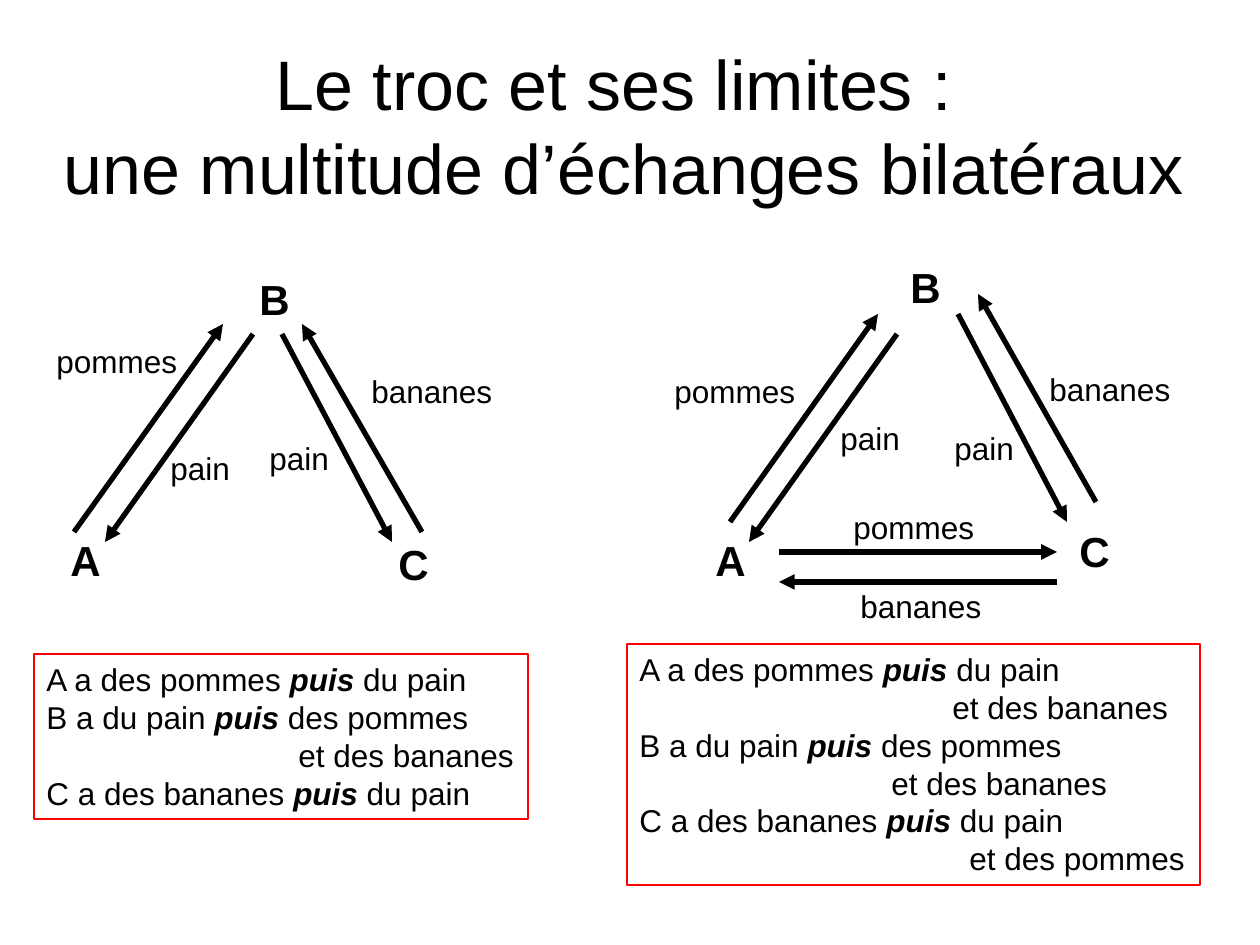
"""Build a slide comparing two barter diagrams between A, B and C."""
from typing import NamedTuple

from lxml import etree
from pptx import Presentation, util as u
from pptx.dml import color
from pptx.enum import shapes, text
from pptx.oxml import ns

PX = 914400 / 126
FONT = "Arial"
COLORS = {"ink": "000000", "frame": "FF0000"}


class Label(NamedTuple):
    words: str
    left: int
    top: int


class Arrow(NamedTuple):
    x1: int
    y1: int
    x2: int
    y2: int


class Line(NamedTuple):
    words: str
    indent: int = 0


class Summary(NamedTuple):
    left: int
    top: int
    width: int
    height: int
    lines: list[Line]


PARTIES = [
    Label("B", 247, 267), Label("A", 58, 528), Label("C", 386, 532),
    Label("B", 898, 255), Label("A", 703, 528), Label("C", 1067, 519),
]
GOODS = [
    Label("pommes", 44, 336), Label("pain", 158, 443),
    Label("pain", 257, 433), Label("bananes", 359, 366),
    Label("pommes", 662, 366), Label("pain", 828, 413),
    Label("pain", 942, 423), Label("bananes", 1037, 364),
    Label("pommes", 841, 502), Label("bananes", 848, 581),
]
ARROWS = [
    Arrow(74, 532, 223, 324), Arrow(253, 334, 105, 542),
    Arrow(282, 334, 392, 542), Arrow(422, 532, 302, 324),
    Arrow(730, 522, 878, 314), Arrow(897, 334, 749, 542),
    Arrow(958, 314, 1067, 522), Arrow(1096, 502, 978, 294),
    Arrow(779, 552, 1057, 552), Arrow(1057, 582, 779, 582),
]
A_TRADE = Line("A a des pommes *puis* du pain")
B_TRADE = Line("B a du pain *puis* des pommes")
C_TRADE = Line("C a des bananes *puis* du pain")
SUMMARIES = [
    Summary(34, 654, 494, 165, [
        A_TRADE, B_TRADE, Line("et des bananes", 252), C_TRADE]),
    Summary(627, 644, 573, 241, [
        A_TRADE, Line("et des bananes", 313),
        B_TRADE, Line("et des bananes", 252),
        C_TRADE, Line("et des pommes", 330)]),
]
TITLE = [Line("Le troc et ses limites : "),
         Line("une multitude d’échanges bilatéraux")]


def px(value: float) -> u.Emu:
    """Turn pixels into EMU."""
    return u.Emu(round(value * PX))


def rgb(name: str) -> color.RGBColor:
    """Look up a named colour."""
    return color.RGBColor.from_string(COLORS[name])


def write(shape, lines: list[Line], *, size: int, bold: bool = False,
          wrap: bool = False, align=text.PP_ALIGN.LEFT,
          anchor=text.MSO_ANCHOR.TOP) -> None:
    """Fill a shape with lines, setting words between asterisks in bold italic."""
    frame = shape.text_frame
    frame.word_wrap = wrap
    frame.vertical_anchor = anchor
    for index, line in enumerate(lines):
        paragraph = frame.add_paragraph() if index else frame.paragraphs[0]
        paragraph.alignment = align
        if line.indent:
            properties = paragraph._p.get_or_add_pPr()
            properties.set("marL", str(px(line.indent)))
            properties.set("indent", "0")
        for part, words in enumerate(line.words.split("*")):
            run = paragraph.add_run()
            run.text = words
            run.font.name = FONT
            run.font.size = u.Pt(size)
            run.font.bold = bold or part % 2 == 1
            run.font.italic = part % 2 == 1
            run.font.color.rgb = rgb("ink")


def draw_title(slide) -> None:
    """Draw the centred title."""
    shape = slide.shapes.add_textbox(px(25), px(45), px(1197), px(158))
    write(shape, TITLE, size=40, wrap=True, align=text.PP_ALIGN.CENTER,
          anchor=text.MSO_ANCHOR.MIDDLE)


def draw_label(slide, label: Label, width: int, height: int, size: int,
               bold: bool = False) -> None:
    """Draw the name of a party or a good."""
    shape = slide.shapes.add_textbox(px(label.left), px(label.top),
                                     px(width), px(height))
    shape.text_frame.margin_right = 0
    write(shape, [Line(label.words)], size=size, bold=bold)


def draw_arrow(slide, arrow: Arrow) -> None:
    """Draw one exchange as a thick arrow."""
    connector = slide.shapes.add_connector(
        shapes.MSO_CONNECTOR.STRAIGHT, *(px(value) for value in arrow))
    connector.line.color.rgb = rgb("ink")
    connector.line.width = u.Pt(3)
    outline = connector.line._get_or_add_ln()
    etree.SubElement(outline, ns.qn("a:tailEnd"), type="triangle")
    etree.SubElement(connector._element.spPr, ns.qn("a:effectLst"))


def draw_summary(slide, summary: Summary) -> None:
    """Draw a framed list of trades."""
    shape = slide.shapes.add_shape(
        shapes.MSO_SHAPE.RECTANGLE, px(summary.left), px(summary.top),
        px(summary.width), px(summary.height))
    shape.shadow.inherit = False
    shape.fill.background()
    shape.line.color.rgb = rgb("frame")
    shape.line.width = u.Pt(0.75)
    shape.text_frame.margin_right = 0
    write(shape, summary.lines, size=18, wrap=True)


def main() -> None:
    """Build and save the presentation."""
    presentation = Presentation()
    presentation.slide_width = u.Inches(10)
    presentation.slide_height = u.Inches(7.5)
    slide = presentation.slides.add_slide(presentation.slide_layouts[6])
    draw_title(slide)
    for arrow in ARROWS:
        draw_arrow(slide, arrow)
    for party in PARTIES:
        draw_label(slide, party, 55, 63, 24, bold=True)
    for good in GOODS:
        draw_label(slide, good, 85 if good.words == "pain" else 146, 50, 18)
    for summary in SUMMARIES:
        draw_summary(slide, summary)
    presentation.save("out.pptx")


if __name__ == "__main__":
    main()
